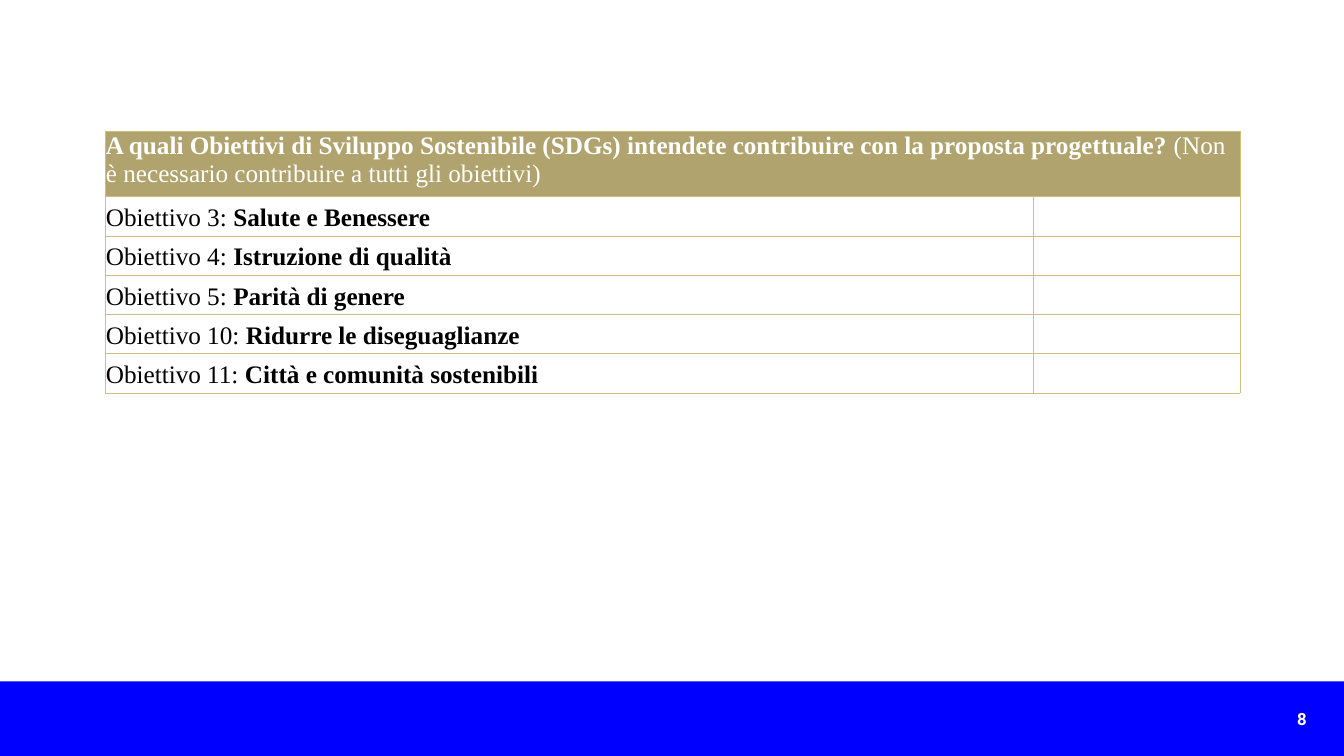
from dataclasses import dataclass

from lxml import etree
from pptx import Presentation
from pptx import util as u
from pptx.dml.color import RGBColor
from pptx.enum import shapes, text
from pptx.oxml import ns


@dataclass(frozen=True)
class Theme:
    white: str = "FFFFFF"
    black: str = "000000"
    blue: str = "0000FF"
    gold: str = "B0A36D"
    border: str = "CFBE7E"
    border_width: float = 0.5
    table_font: str = "Times New Roman"
    table_size: int = 18
    number_font: str = "Roboto"
    number_size: int = 12


class SlideBuilder:
    def __init__(self, slide, theme):
        self.slide = slide
        self.theme = theme

    def bar(self, left, top, width, height, color):
        shape = self.slide.shapes.add_shape(
            shapes.MSO_SHAPE.RECTANGLE,
            u.Inches(left), u.Inches(top), u.Inches(width), u.Inches(height))
        shape.shadow.inherit = False
        shape.fill.solid()
        shape.fill.fore_color.rgb = RGBColor.from_string(color)
        shape.line.fill.background()

    def style_font(self, font, name, size, color, bold):
        font.name = name
        font.size = u.Pt(size)
        font.bold = bold
        font.color.rgb = RGBColor.from_string(color)

    def page_number(self, left, top, width, height, number):
        box = self.slide.shapes.add_textbox(
            u.Inches(left), u.Inches(top), u.Inches(width), u.Inches(height))
        frame = box.text_frame
        frame.word_wrap = True
        frame.text = str(number)
        paragraph = frame.paragraphs[0]
        paragraph.alignment = text.PP_ALIGN.RIGHT
        self.style_font(paragraph.runs[0].font, self.theme.number_font,
                        self.theme.number_size, self.theme.white, True)

    def cell_borders(self, cell):
        properties = cell._tc.get_or_add_tcPr()
        for side in ("a:lnL", "a:lnR", "a:lnT", "a:lnB"):
            line = etree.SubElement(properties, ns.qn(side),
                                    w=str(u.Pt(self.theme.border_width)))
            fill = etree.SubElement(line, ns.qn("a:solidFill"))
            etree.SubElement(fill, ns.qn("a:srgbClr"), val=self.theme.border)

    def cell_text(self, cell, parts, color):
        paragraph = cell.text_frame.paragraphs[0]
        paragraph.font.size = u.Pt(self.theme.table_size)
        for words, bold in parts:
            run = paragraph.add_run()
            run.text = words
            self.style_font(run.font, self.theme.table_font,
                            self.theme.table_size, color, bold)

    def goals_table(self, left, top, columns, heights, header, goals):
        table = self.slide.shapes.add_table(
            len(heights), len(columns), u.Inches(left), u.Inches(top),
            u.Inches(sum(columns)), u.Inches(sum(heights))).table
        table.first_row = table.horz_banding = False
        for column, width in zip(table.columns, columns):
            column.width = u.Inches(width)
        for row, height in zip(table.rows, heights):
            row.height = u.Inches(height)

        # Common cell style
        for cell in table.iter_cells():
            cell.margin_left = cell.margin_right = cell.margin_top = u.Inches(0.01)
            cell.margin_bottom = u.Inches(0.04)
            cell.vertical_anchor = text.MSO_ANCHOR.BOTTOM
            self.cell_borders(cell)
            cell.fill.background()
            self.cell_text(cell, [], self.theme.black)

        # Header across both columns
        question = table.cell(0, 0)
        question.merge(table.cell(0, len(columns) - 1))
        question.vertical_anchor = text.MSO_ANCHOR.TOP
        question.fill.solid()
        question.fill.fore_color.rgb = RGBColor.from_string(self.theme.gold)
        self.cell_text(question, header, self.theme.white)

        # One row per goal, with an empty answer cell
        for row, (number, name) in enumerate(goals, start=1):
            self.cell_text(table.cell(row, 0),
                           [(f"Obiettivo {number}: ", False), (name, True)],
                           self.theme.black)


HEADER = [
    ("A quali Obiettivi di Sviluppo Sostenibile (SDGs) intendete contribuire "
     "con la proposta progettuale? ", True),
    ("(Non è necessario contribuire a tutti gli obiettivi)", False),
]
GOALS = [
    (3, "Salute e Benessere"),
    (4, "Istruzione di qualità"),
    (5, "Parità di genere"),
    (10, "Ridurre le diseguaglianze"),
    (11, "Città e comunità sostenibili"),
]


def main():
    presentation = Presentation()
    presentation.slide_width = u.Inches(13.33)
    presentation.slide_height = u.Inches(7.5)
    slide = presentation.slides.add_slide(presentation.slide_layouts[6])
    theme = Theme()
    builder = SlideBuilder(slide, theme)

    # Footer
    builder.bar(0, 6.76, 13.33, 0.74, theme.blue)
    builder.page_number(8.82, 6.98, 4.24, 0.3, 8)

    # Table of goals
    builder.goals_table(1.04, 1.3, [9.21, 2.05],
                        [0.65] + [0.39] * len(GOALS), HEADER, GOALS)

    presentation.save("out.pptx")


if __name__ == "__main__":
    main()
